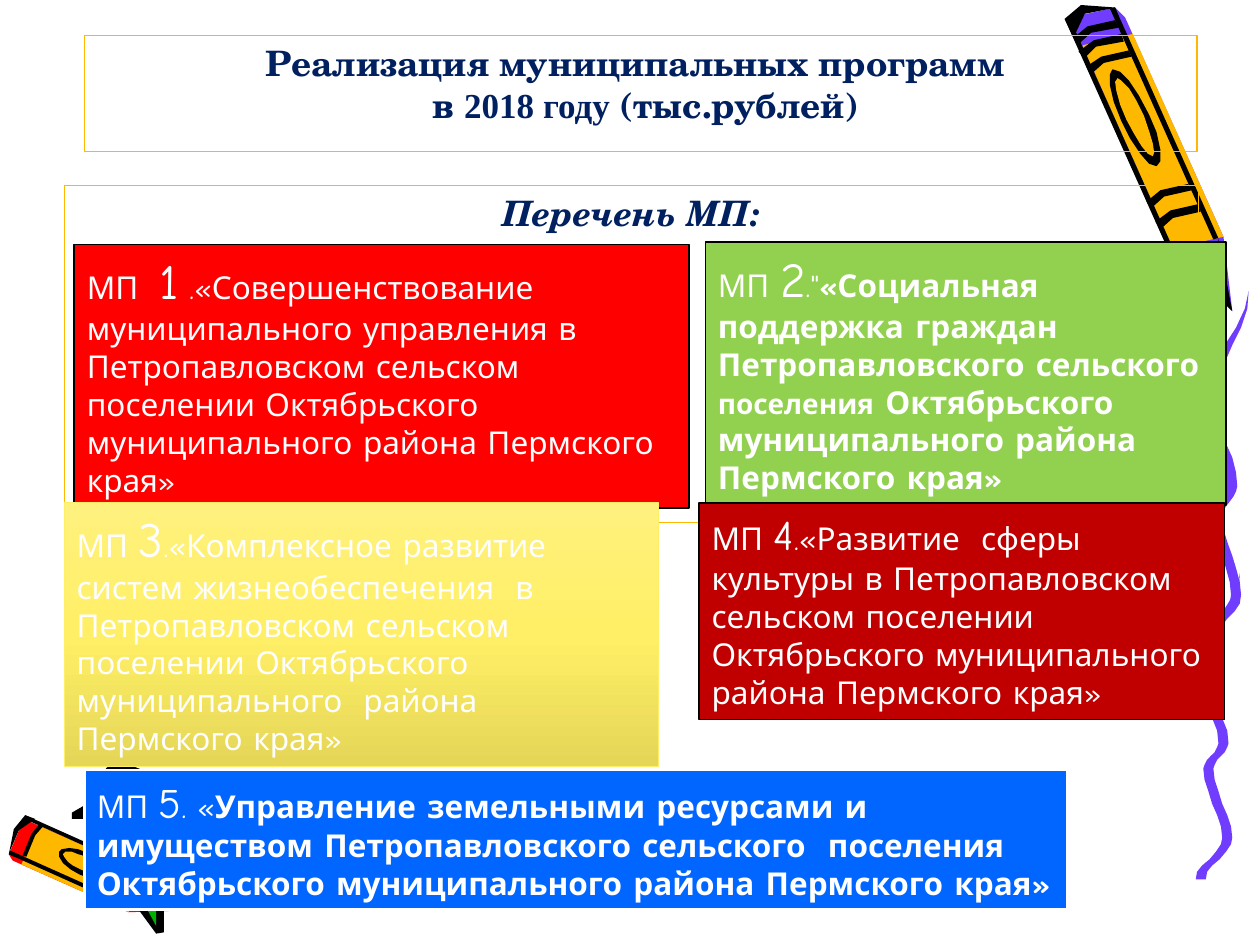
from copy import deepcopy
from math import cos, pi, sin

from pptx import Presentation
from pptx.dml.color import RGBColor
from pptx.enum.shapes import MSO_SHAPE
from pptx.enum.text import MSO_ANCHOR, MSO_AUTO_SIZE, PP_ALIGN
from pptx.oxml import parse_xml
from pptx.oxml.ns import nsdecls, qn
from pptx.util import Pt

PX = 9144  # 100 px to the inch
RECTANGLE = MSO_SHAPE.RECTANGLE
TOP = MSO_ANCHOR.TOP
LEFT, CENTER = PP_ALIGN.LEFT, PP_ALIGN.CENTER
NO_FIT, GROW = MSO_AUTO_SIZE.NONE, MSO_AUTO_SIZE.SHAPE_TO_FIT_TEXT

HEADING_FONT, BOX_FONT = "TeX Gyre Schola", "Comic Neue"
NAVY, WHITE, BLACK = "002060", "FFFFFF", "000000"
AMBER, VIOLET, RED, GREEN = "FFB800", "703DFF", "FF0000", "00B200"


def color(hex_string):
    return RGBColor.from_string(hex_string)


def draw_outline(points, fill):
    """Add a closed, filled polygon without a border; points are in px."""
    points = [(round(x), round(y)) for x, y in points]
    builder = shapes.build_freeform(*points[0], scale=PX)
    builder.add_line_segments(points[1:], close=True)
    shape = builder.convert_to_shape()
    shape.shadow.inherit = False
    shape.fill.solid()
    shape.fill.fore_color.rgb = color(fill)
    shape.line.fill.background()


presentation = Presentation()
presentation.slide_width, presentation.slide_height = 1000 * PX, 750 * PX
slide = presentation.slides.add_slide(presentation.slide_layouts[1])
shapes = slide.shapes

# Pencils: each part is a polygon of (along, across) fractions. Along runs from
# the eraser (0) to the end of the barrel (1), across from one edge to the other.
# Each pencil: corner, length vector, width vector, eraser fill, bands, oval centre
pencils = [
    ((20, 647), (96, 43), (-13, 31), RED, [0.13], 0.55),
    ((845, 15), (82, 183), (40, -9), VIOLET, [0.08, 0.14, 0.21, 0.79, 0.88], 0.45),
]
for corner, length, width, eraser_fill, bands, oval_center in pencils:
    parts = [
        (eraser_fill, [(0, 0.1), (0, 1), (0.05, 1.1), (1, 1.1), (1.3, 0.65), (1, 0.1)]),
        (AMBER, [(0.12, 0.1), (0.12, 1.1), (1, 1.1), (1, 0.1)]),
        (BLACK, [(0, 0), (1, 0), (1, 0.1), (0.05, 0.1)]),  # near edge
        (BLACK, [(0, 0.9), (0, 1), (1, 1), (1, 0.9)]),  # far edge
        (BLACK, [(0.08, 0), (0, 0), (-0.04, 0.4), (0, 1), (0.04, 1), (0, 0.9), (0, 0.4)]),  # cap
        (BLACK, [(1, 0), (1.3, 0.65), (1, 1), (1.2, 0.6)]),  # tip
    ]
    for band in bands:
        parts.append((BLACK, [(band, 0), (band - 0.03, 0.35), (band - 0.03, 0.9),
                              (band, 0.9), (band, 0.35), (band + 0.03, 0.05)]))
    for fill, radius_along, radius_across in [(BLACK, 0.21, 0.28), (AMBER, 0.17, 0.17)]:
        angles = [2 * pi * step / 16 for step in range(16)]
        parts.append((fill, [(oval_center + radius_along * cos(angle),
                              0.47 + radius_across * sin(angle)) for angle in angles]))
    for fill, part in parts:
        draw_outline([(corner[0] + along * length[0] + across * width[0],
                       corner[1] + along * length[1] + across * width[1])
                      for along, across in part], fill)

small_pencil_details = [
    (BLACK, [(57, 645), (83, 630), (86, 638), (67, 646), (67, 650), (57, 650)]),  # strut
    (BLACK, [(78, 617), (85, 609), (100, 606), (113, 611), (98, 611), (85, 618)]),  # clip
    (BLACK, [(110, 722), (124, 741), (130, 740), (130, 720)]),  # shavings
    (GREEN, [(117, 722), (124, 735), (124, 722)]),
]
for fill, points in small_pencil_details:
    draw_outline(points, fill)

# Ribbon: a wave eased by cosine between its turning points, thin at the top
turns = [(984, 455), (953, 530), (971, 590), (959, 610), (974, 665), (953, 698)]
STEPS, HALF_WIDTH = 6, 4
center_line = []
for (x, y), (next_x, next_y) in zip(turns, turns[1:]):
    for step in range(STEPS):
        share = step / STEPS
        center_line.append((x + (next_x - x) * (1 - cos(pi * share)) / 2,
                            y + (next_y - y) * share))
center_line.append(turns[-1])
half_widths = [min(HALF_WIDTH, index) for index in range(len(center_line))]
left_edge = [(x - half, y) for (x, y), half in zip(center_line, half_widths)]
right_edge = [(x + half, y) for (x, y), half in zip(center_line, half_widths)]
ribbon = left_edge + right_edge[:0:-1]
ribbon_top = turns[0][1]
for shift, top, stretch in [(0, ribbon_top, 1), (7, 231, 1.15)]:
    draw_outline([(x + shift, top + (y - ribbon_top) * stretch) for x, y in ribbon], VIOLET)

# Title and list heading: (bounds, italic, paragraphs of (text, font) runs)
headings = [
    (shapes.title, (67, 28, 883, 92), False, [
        [("Реализация муниципальных программ ", HEADING_FONT)],
        [(" в ", HEADING_FONT), ("2018 году", "Times New Roman"), (" (тыс.рублей)", HEADING_FONT)],
    ]),
    (slide.placeholders[1], (51, 147, 900, 268), True, [[("Перечень МП:", HEADING_FONT)]]),
]
for shape, bounds, italic, paragraphs in headings:
    shapes._spTree.append(shape._element)  # in front of the decoration
    shape.left, shape.top, shape.width, shape.height = (length * PX for length in bounds)
    shape.line.color.rgb = color(AMBER)
    shape.line.width = Pt(0.75)
    frame = shape.text_frame
    frame.auto_size = NO_FIT
    frame.vertical_anchor = TOP
    for index, runs in enumerate(paragraphs):
        paragraph = frame.add_paragraph() if index else frame.paragraphs[0]
        paragraph.alignment = CENTER
        paragraph.space_before = Pt(0)
        properties = paragraph._p.get_or_add_pPr()
        properties.set("marL", "0")
        properties.set("indent", "0")
        properties.append(parse_xml(f"<a:buNone {nsdecls('a')}/>"))
        paragraph.font.size = Pt(20)
        paragraph.font.bold = True
        paragraph.font.italic = italic
        paragraph.font.color.rgb = color(NAVY)
        for text, font_name in runs:
            run = paragraph.add_run()
            run.text = text
            run.font.name = font_name

# Programme boxes: (bounds, fill, line, line width, runs of (text, size, bold))
programmes = [
    ((59, 194, 488, 209), RED, BLACK, 1, [
        ("МП  ", 18, False), ("1", 28, False),
        (" .«Совершенствование муниципального управления в Петропавловском сельском поселении "
         "Октябрьского муниципального района Пермского края»", 18, False)]),
    ((560, 192, 413, 209), "92D050", BLACK, 1, [
        ("МП ", 18, False), ("2", 28, False), (".\"", 18, False),
        ("«Социальная поддержка граждан Петропавловского сельского ", 18, True),
        ("поселения", 16, True),
        (" Октябрьского муниципального района Пермского края»", 18, True)]),
    ((51, 399, 472, 209), ["FFF17D", "FFEF66", "E5D658"], "FFEF66", 0.5, [
        ("МП ", 18, False), ("3", 28, False),
        (".«Комплексное развитие систем жизнеобеспечения  в Петропавловском сельском поселении "
         "Октябрьского муниципального  района Пермского края»", 18, False)]),
    ((555, 399, 417, 172), "C00000", BLACK, 1, [
        ("МП ", 18, False), ("4", 24, False),
        (".«Развитие  сферы культуры в Петропавловском сельском поселении "
         "Октябрьского муниципального  района Пермского края»", 18, False)]),
    ((67, 611, 780, 111), "0066FF", WHITE, 1.5, [
        ("МП ", 18, False), ("5", 24, False), (". «", 18, False),
        ("Управление земельными ресурсами и имуществом Петропавловского сельского  поселения "
         "Октябрьского муниципального района Пермского края»", 18, True)]),
]
for bounds, fill, line, line_width, runs in programmes:
    shape = shapes.add_shape(RECTANGLE, *(length * PX for length in bounds))
    shape.shadow.inherit = False
    if isinstance(fill, list):
        shape.fill.gradient()
        shape.fill.gradient_angle = 270
        stop_list = shape._element.spPr.find(".//" + qn("a:gsLst"))
        stop_list.append(deepcopy(stop_list[-1]))
        for index, stop in enumerate(shape.fill.gradient_stops):
            stop.position = index / 2
            stop.color.rgb = color(fill[index])
    else:
        shape.fill.solid()
        shape.fill.fore_color.rgb = color(fill)
    shape.line.color.rgb = color(line)
    shape.line.width = Pt(line_width)
    frame = shape.text_frame
    frame.word_wrap = True
    frame.auto_size = GROW
    frame.vertical_anchor = TOP
    paragraph = frame.paragraphs[0]
    paragraph.alignment = LEFT
    paragraph.font.name = BOX_FONT
    paragraph.font.color.rgb = color(WHITE)
    for text, size, bold in runs:
        run = paragraph.add_run()
        run.text = text
        run.font.size = Pt(size)
        run.font.bold = bold

presentation.save("out.pptx")
